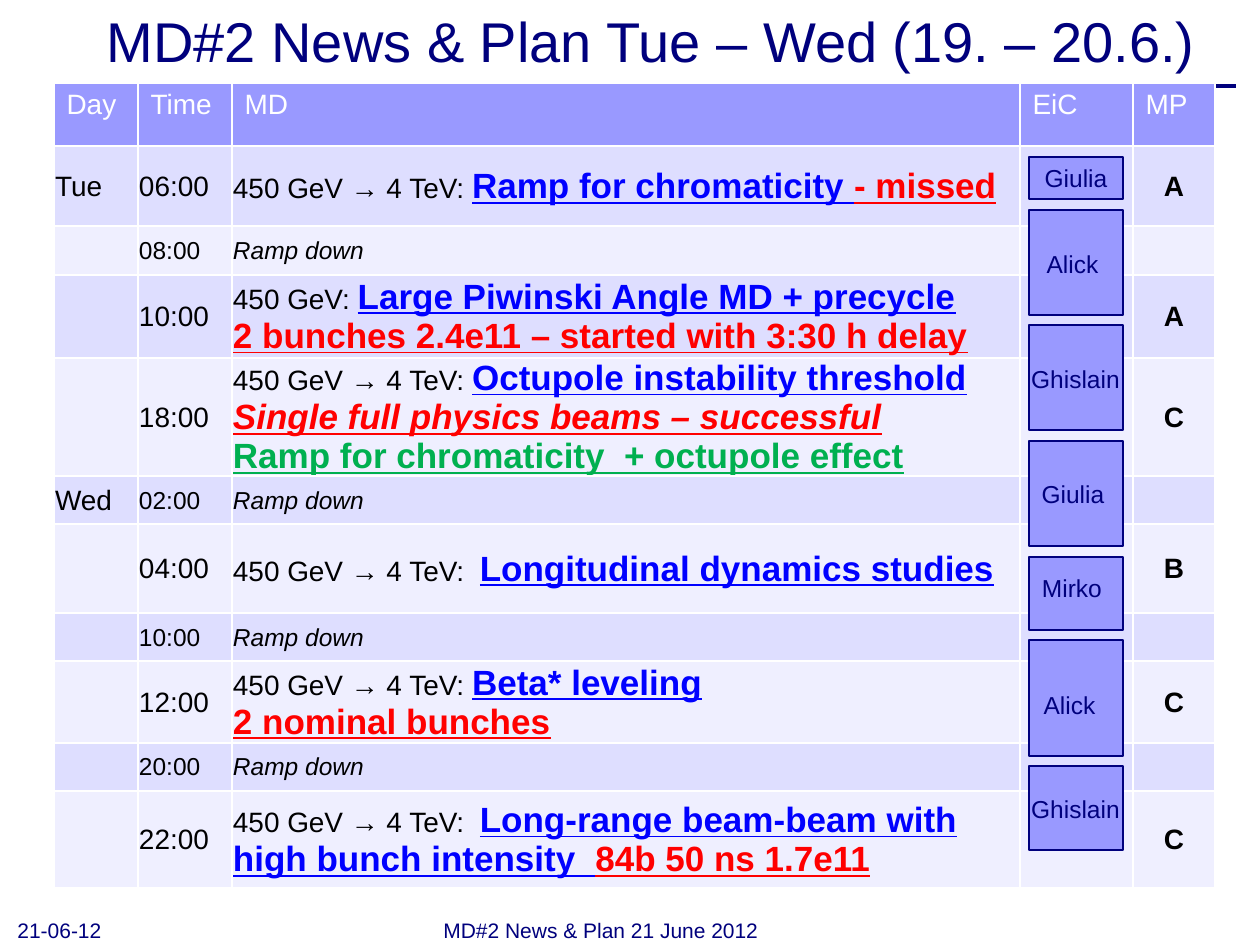
from lxml import etree
from pptx import Presentation
from pptx.dml.color import RGBColor
from pptx.enum.shapes import MSO_CONNECTOR as CONNECTOR, MSO_SHAPE as SHAPE
from pptx.enum.text import MSO_ANCHOR as ANCHOR, PP_ALIGN as ALIGN
from pptx.oxml.ns import qn
from pptx.util import Emu, Pt

NAVY = RGBColor(0x00, 0x00, 0x7D)
VIOLET = RGBColor(0x99, 0x99, 0xFF)
BAND_DARK = RGBColor(0xDE, 0xDE, 0xFF)
BAND_LIGHT = RGBColor(0xEF, 0xEF, 0xFF)
WHITE = RGBColor(0xFF, 0xFF, 0xFF)
BLACK = RGBColor(0x00, 0x00, 0x00)
BLUE = RGBColor(0x00, 0x00, 0xFF)
RED = RGBColor(0xFF, 0x00, 0x00)
GREEN = RGBColor(0x00, 0xB0, 0x50)


def px(count):
    return Emu(round(count * 914400 / 126))


def add_span(para, text, size, color, bold=False, italic=False, underline=False):
    span = para.add_run()
    span.text = text
    font = span.font
    font.name, font.size, font.color.rgb = "Arial", Pt(size), color
    font.bold, font.italic, font.underline = bold, italic, underline


deck = Presentation()
deck.slide_width, deck.slide_height = px(1260), px(945)
page = deck.slides.add_slide(deck.slide_layouts[5])

# Title and the rule below it
title = page.shapes.title
title.left, title.top, title.width, title.height = px(94), px(4), px(1134), px(72)
title.text_frame.vertical_anchor = ANCHOR.MIDDLE
para = title.text_frame.paragraphs[0]
para.alignment = ALIGN.LEFT
add_span(para, "MD#2 News & Plan Tue – Wed (19. – 20.6.)", 32, NAVY)

rule = page.shapes.add_connector(CONNECTOR.STRAIGHT, px(94), px(86), px(1236), px(86))
rule.line.color.rgb = NAVY
rule.line.width = Pt(2)
etree.SubElement(rule._element.spPr, qn("a:effectLst"))

# Schedule: day, time, energy, highlighted lines of (text, colour), MP class, row height
# A row without energy is a ramp down
RAMP = "450 GeV → 4 TeV: "
HEADINGS = ["Day", "Time", "MD", "EiC", "MP"]
COLUMN_WIDTHS = [84, 94, 788, 113, 82]
HEADER_HEIGHT = 63
SCHEDULE = [
    ("Tue", "06:00", RAMP,
     [[("Ramp for chromaticity ", BLUE), ("- missed", RED)]], "A", 80),
    ("", "08:00", "", [], "", 49),
    ("", "10:00", "450 GeV: ",
     [[("Large Piwinski Angle MD + precycle", BLUE)],
      [("2 bunches 2.4e11 – started with 3:30 h delay", RED)]], "A", 83),
    ("", "18:00", RAMP,
     [[("Octupole instability threshold", BLUE)],
      [("Single full physics beams – successful", RED)],
      [("Ramp for chromaticity  + octupole effect", GREEN)]], "C", 118),
    ("Wed", "02:00", "", [], "", 48),
    ("", "04:00", RAMP + " ", [[("Longitudinal dynamics studies", BLUE)]], "B", 89),
    ("", "10:00", "", [], "", 48),
    ("", "12:00", RAMP,
     [[("Beta* leveling", BLUE)], [("2 nominal bunches", RED)]], "C", 82),
    ("", "20:00", "", [], "", 48),
    ("", "22:00", RAMP + " ",
     [[("Long-range beam-beam with high bunch intensity  ", BLUE),
       ("84b 50 ns 1.7e11", RED)]], "C", 97),
]
heights = [HEADER_HEIGHT] + [entry[-1] for entry in SCHEDULE]
table = page.shapes.add_table(len(heights), len(HEADINGS), px(54), px(83),
                              px(sum(COLUMN_WIDTHS)), px(sum(heights))).table
for column, width in zip(table.columns, COLUMN_WIDTHS):
    column.width = px(width)
for row, height in zip(table.rows, heights):
    row.height = px(height)

for cell, heading in zip(table.rows[0].cells, HEADINGS):
    cell.fill.solid()
    cell.fill.fore_color.rgb = VIOLET
    add_span(cell.text_frame.paragraphs[0], heading, 16, WHITE)

for index, (day, time, energy, lines, mp_class, height) in enumerate(SCHEDULE, 1):
    cells = list(table.rows[index].cells)
    for cell in cells:
        cell.fill.solid()
        cell.fill.fore_color.rgb = BAND_DARK if index % 2 else BAND_LIGHT
        cell.vertical_anchor = ANCHOR.MIDDLE
        cell.margin_left = cell.margin_top = cell.margin_right = px(1)
        cell.margin_bottom = 0
    day_para, time_para, md_para, _, mp_para = [
        cell.text_frame.paragraphs[0] for cell in cells]
    if day:
        add_span(day_para, day, 16, BLACK)
    add_span(time_para, time, 16 if energy else 14, BLACK)
    if not energy:
        add_span(md_para, "Ramp down", 14, BLACK, italic=True)
        continue
    add_span(md_para, energy, 16, BLACK)
    for number, line in enumerate(lines):
        para = cells[2].text_frame.add_paragraph() if number else md_para
        for text, color in line:
            add_span(para, text, 20, color, bold=True, underline=True,
                     italic=text.startswith("Single"))
    mp_para.alignment = ALIGN.CENTER
    add_span(mp_para, mp_class, 16, BLACK, bold=True)

# Engineers in charge: name, box top and height, label left, top and width
SHIFTS = [
    ("Giulia", 157, 42, 1029, 157, 94),
    ("Alick", 210, 105, 1012, 243, 121),
    ("Ghislain", 325, 105, 1018, 358, 115),
    ("Giulia", 441, 105, 1029, 473, 88),
    ("Mirko", 557, 73, 1029, 567, 86),
    ("Alick", 640, 116, 1029, 684, 81),
    ("Ghislain", 766, 84, 1018, 788, 115),
]
for name, top, height, label_left, label_top, label_width in SHIFTS:
    box = page.shapes.add_shape(SHAPE.RECTANGLE, px(1029), px(top), px(94), px(height))
    box.shadow.inherit = False
    box.fill.solid()
    box.fill.fore_color.rgb = VIOLET
    box.line.color.rgb = NAVY
    box.line.width = Pt(1)
    label = page.shapes.add_textbox(px(label_left), px(label_top), px(label_width), px(43))
    para = label.text_frame.paragraphs[0]
    para.alignment = ALIGN.CENTER
    add_span(para, name, 14, NAVY)

# Footer and date
for text, left, width in [("MD#2 News & Plan 21 June 2012", 431, 399),
                          ("21-06-12", 5, 294)]:
    footer = page.shapes.add_textbox(px(left), px(913), px(width), px(36))
    footer.text_frame.word_wrap = True
    footer.text_frame.vertical_anchor = ANCHOR.BOTTOM
    add_span(footer.text_frame.paragraphs[0], text, 12, NAVY)

deck.save("out.pptx")
